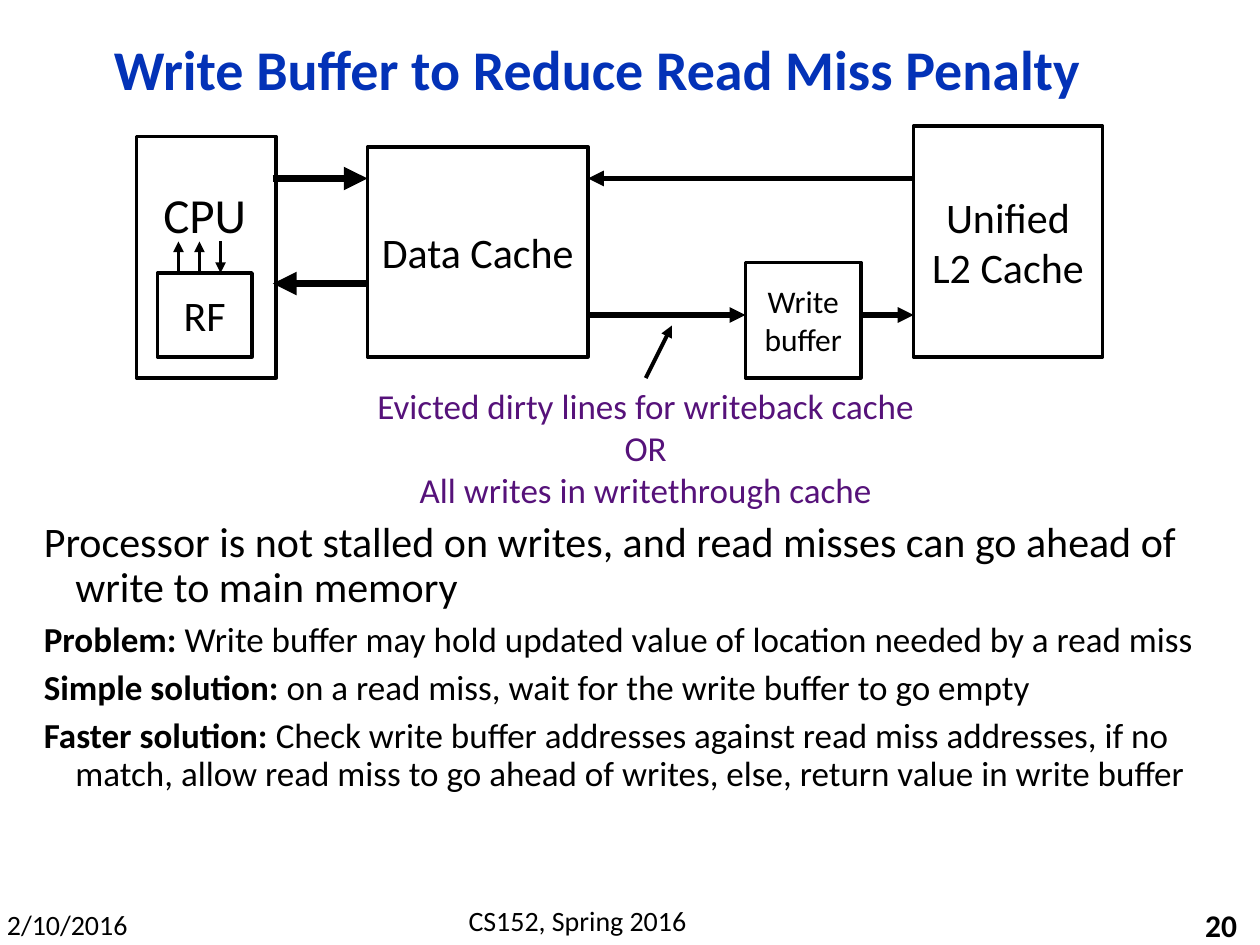
"""Build a slide on write buffers between a data cache and an L2 cache."""
from dataclasses import dataclass

from lxml import etree
from pptx import Presentation
from pptx import util as u
from pptx.dml.color import RGBColor
from pptx.enum import shapes, text
from pptx.oxml import ns


@dataclass(frozen=True)
class Theme:
    """Colours, font and type sizes in points."""
    font: str = "Calibri"
    ink: str = "000000"
    paper: str = "FFFFFF"
    blue: str = "0332B7"
    plum: str = "56127A"
    title: int = 32
    large: int = 28
    lead: int = 24
    body: int = 20
    small: int = 18
    foot: int = 16
    edge: float = 2
    gap: float = 6
    tight: float = 0.9


class Board:
    """Draw on one slide with a grid of 120 columns and 90 rows."""

    def __init__(self, deck, theme):
        """Add a blank slide to the deck."""
        self.theme = theme
        self.slide = deck.slides.add_slide(deck.slide_layouts[6])
        self.col = deck.slide_width / 120
        self.row = deck.slide_height / 90

    def place(self, x, y):
        """Turn a column and a row into slide lengths."""
        return round(x * self.col), round(y * self.row)

    def style(self, run, size, tint=None, bold=False):
        """Give a run its font, size, colour and weight."""
        font = run.font
        font.name, font.size, font.bold = self.theme.font, u.Pt(size), bold
        font.color.rgb = RGBColor.from_string(tint or self.theme.ink)

    def letter(self, shape, words, size, tint=None, bold=False,
               align=text.PP_ALIGN.CENTER, mid=False, wrap=True):
        """Fill a shape with lines of one style."""
        frame = shape.text_frame
        frame.text = words
        frame.word_wrap = wrap
        anchor = text.MSO_ANCHOR
        frame.vertical_anchor = anchor.MIDDLE if mid else anchor.TOP
        for para in frame.paragraphs:
            para.alignment = align
            for run in para.runs:
                self.style(run, size, tint, bold)

    def label(self, area, words, size, **look):
        """Add a text box and return it."""
        box = self.slide.shapes.add_textbox(
            *self.place(*area[:2]), *self.place(*area[2:]))
        self.letter(box, words, size, **look)
        return box

    def block(self, area, words="", size=24):
        """Add an outlined box with centred text."""
        box = self.slide.shapes.add_shape(
            shapes.MSO_SHAPE.RECTANGLE,
            *self.place(*area[:2]), *self.place(*area[2:]))
        box.shadow.inherit = False
        box.fill.solid()
        box.fill.fore_color.rgb = RGBColor.from_string(self.theme.paper)
        box.line.color.rgb = RGBColor.from_string(self.theme.ink)
        box.line.width = u.Pt(self.theme.edge)
        if words:
            self.letter(box, words, size, mid=True)

    def arrow(self, start, end, width):
        """Add a line that points at its end."""
        line = self.slide.shapes.add_connector(
            shapes.MSO_CONNECTOR.STRAIGHT,
            *self.place(*start), *self.place(*end))
        line.line.color.rgb = RGBColor.from_string(self.theme.ink)
        line.line.width = u.Pt(width)
        props = line._element.spPr
        etree.SubElement(props.find(ns.qn("a:ln")),
                         ns.qn("a:tailEnd"), type="triangle")
        etree.SubElement(props, ns.qn("a:effectLst"))

    def notes(self, area, items):
        """Add hanging paragraphs, each with a bold lead and plain text."""
        box = self.label(area, "", self.theme.body)
        frame = box.text_frame
        for i, (lead, rest, size) in enumerate(items):
            para = frame.add_paragraph() if i else frame.paragraphs[0]
            para.alignment = text.PP_ALIGN.LEFT
            para.line_spacing = self.theme.tight
            para.space_before = u.Pt(self.theme.gap if i else 0)
            props = para._p.get_or_add_pPr()
            props.set("marL", str(u.Inches(0.25)))
            props.set("indent", str(u.Inches(-0.25)))
            for words, bold in ((lead, True), (rest, False)):
                if words:
                    run = para.add_run()
                    run.text = words
                    self.style(run, size, bold=bold)


def main():
    """Build and save the slide."""
    deck = Presentation()
    deck.slide_width, deck.slide_height = u.Inches(10), u.Inches(7.5)
    look = Theme()
    board = Board(deck, look)

    title = board.label((9, 2, 95.8, 9.7),
                        "Write Buffer to Reduce Read Miss Penalty",
                        look.title, tint=look.blue, bold=True, mid=True)
    title.text_frame.paragraphs[0].line_spacing = look.tight

    board.block((13, 13, 13.3, 23))
    board.block((35, 14, 21, 20), "Data Cache", look.lead)
    board.block((87, 12, 18, 22), "Unified L2 Cache", look.lead)
    board.block((15, 26, 9, 8), "RF", look.lead)
    board.block((71, 25, 11, 11), "Write\nbuffer", look.small)
    board.label((13, 17, 13, 6.8), "CPU", look.large)

    for start, end, width in (
            ((26, 17), (35, 17), 4.5),
            ((35, 27), (26, 27), 4.5),
            ((87, 17), (56, 17), 3),
            ((56, 30), (71, 30), 3),
            ((82, 30), (87, 30), 3),
            ((61.5, 36), (64, 31), 2.25),
            ((17, 26), (17, 23), look.edge),
            ((19, 26), (19, 23), look.edge),
            ((21, 23), (21, 26), look.edge)):
        board.arrow(start, end, width)

    board.label((26, 36, 71, 13.3),
                "Evicted dirty lines for writeback cache\nOR\n"
                "All writes in writethrough cache",
                look.body, tint=look.plum)
    board.notes((3, 49, 113, 32), (
        ("", "Processor is not stalled on writes, and read misses can go "
         "ahead of write to main memory", look.lead),
        ("Problem:", " Write buffer may hold updated value of location "
         "needed by a read miss", look.body),
        ("Simple solution: ", "on a read miss, wait for the write buffer "
         "to go empty", look.body),
        ("Faster solution: ", "Check write buffer addresses against read "
         "miss addresses, if no match, allow read miss to go ahead of "
         "writes, else, return value in write buffer", look.body)))

    board.label((-0.6, 85.8, 14, 4.4), "2/10/2016", look.foot, wrap=False)
    board.label((35, 85.5, 40, 4.4), "CS152, Spring 2016", look.foot)
    board.label((94, 86.2, 25, 3.8), "20", look.small, bold=True,
                align=text.PP_ALIGN.RIGHT, mid=True)
    deck.save("out.pptx")


if __name__ == "__main__":
    main()
